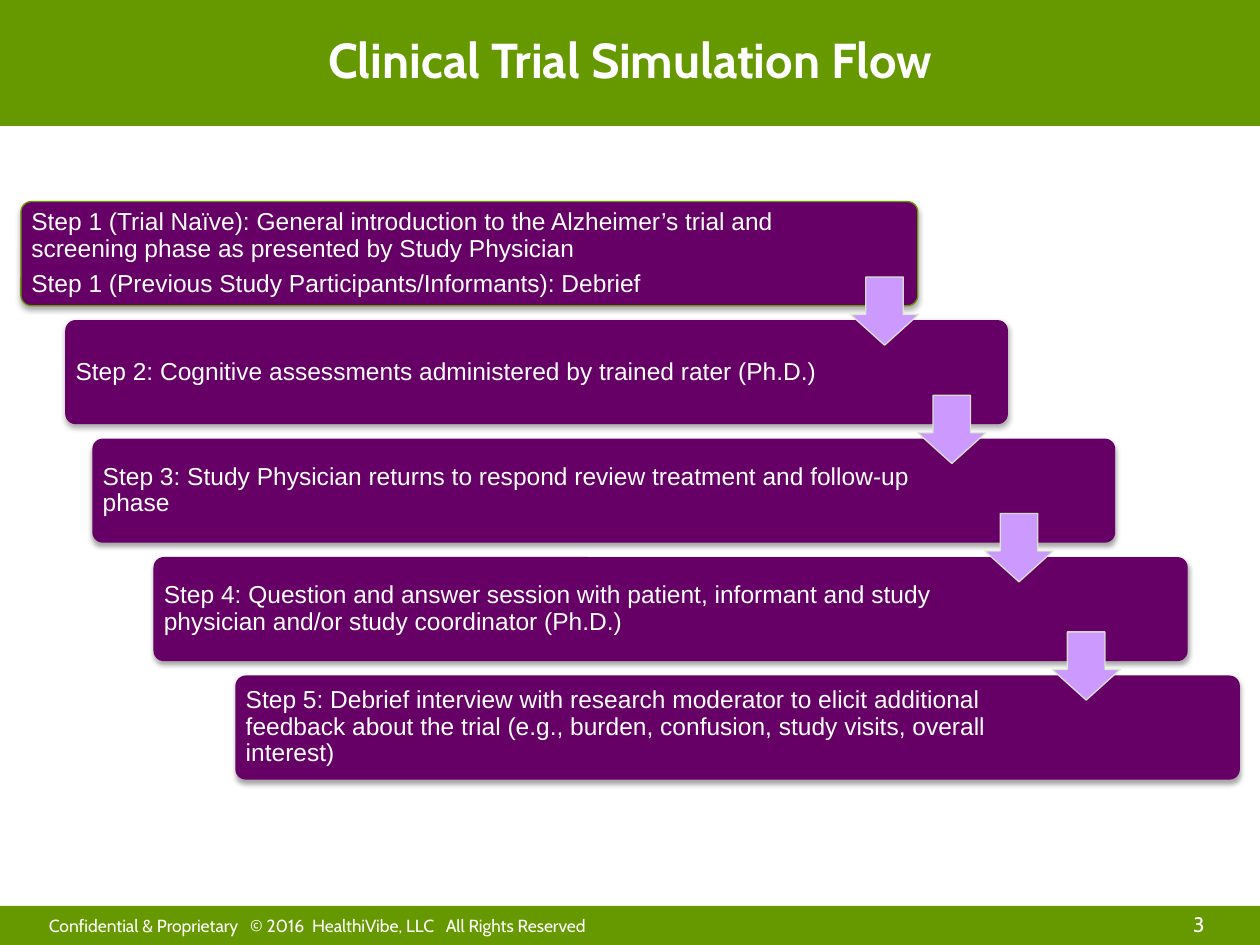
"""Build the Clinical Trial Simulation Flow slide."""
from lxml import etree
from pptx import Presentation
from pptx.dml.color import RGBColor
from pptx.enum.shapes import MSO_SHAPE
from pptx.enum.text import MSO_ANCHOR, PP_ALIGN
from pptx.oxml import parse_xml
from pptx.oxml.ns import nsdecls, qn
from pptx.util import Pt

RECTANGLE = MSO_SHAPE.RECTANGLE
ROUNDED = MSO_SHAPE.ROUNDED_RECTANGLE
DOWN_ARROW = MSO_SHAPE.DOWN_ARROW
TOP, MIDDLE, BOTTOM = MSO_ANCHOR.TOP, MSO_ANCHOR.MIDDLE, MSO_ANCHOR.BOTTOM
LEFT, CENTER, RIGHT = PP_ALIGN.LEFT, PP_ALIGN.CENTER, PP_ALIGN.RIGHT

GREEN = RGBColor(0x66, 0x99, 0x00)
PURPLE = RGBColor(0x66, 0x00, 0x66)
LILAC = RGBColor(0xCC, 0x99, 0xFF)
PALE_GREEN = RGBColor(0xDE, 0xEC, 0xCE)
WHITE = RGBColor(0xFF, 0xFF, 0xFF)

SHADOW_XML = (
    f'<a:effectLst {nsdecls("a")}><a:outerShdw blurRad="{Pt(3.1)}" dist="{Pt(1.8)}" '
    'dir="5400000" rotWithShape="0"><a:srgbClr val="000000"><a:alpha val="35000"/>'
    '</a:srgbClr></a:outerShdw></a:effectLst>'
)

CARD_TOP, CARD_HEIGHT, CARD_PITCH = 115.2, 59.5, 67.7
ARROW_LEFT, ARROW_TOP, ARROW_SIZE = 486, 158.3, 39
ARROW_STEP_X, ARROW_STEP_Y = 38.4, 67.6

# left, width, right inset, paragraphs
STEPS = [
    (12, 512.5, 72, [
        "Step 1 (Trial Naïve): General introduction to the Alzheimer’s trial and "
        "screening phase as presented by Study Physician",
        "Step 1 (Previous Study Participants/Informants): Debrief"]),
    (37.3, 538.7, 85, [
        "Step 2: Cognitive assessments administered by trained rater (Ph.D.)"]),
    (52.8, 584.5, 92, [
        "Step 3: Study Physician returns to respond review treatment and follow-up phase"]),
    (87.7, 591, 93, [
        "Step 4: Question and answer session with patient, informant and study "
        "physician and/or study coordinator (Ph.D.)"]),
    (134.5, 574, 90, [
        "Step 5: Debrief interview with research moderator to elicit additional "
        "feedback about the trial (e.g., burden, confusion, study visits, overall interest)"]),
]


def add_block(page, kind, left, top, width, height, color):
    block = page.shapes.add_shape(kind, Pt(left), Pt(top), Pt(width), Pt(height))
    block.shadow.inherit = False
    block.fill.solid()
    block.fill.fore_color.rgb = color
    block.line.fill.background()
    return block


def write(box, lines, font, size, align=LEFT, anchor=TOP, spacing=0.9, bold=False):
    frame = box.text_frame
    frame.word_wrap = True
    frame.vertical_anchor = anchor
    frame.text = "\n".join(lines)
    for para in frame.paragraphs:
        para.alignment = align
        para.line_spacing = spacing
        para.font.name = font
        para.font.size = Pt(size)
        para.font.bold = bold
        para.font.color.rgb = WHITE
    return frame


deck = Presentation()
deck.slide_width, deck.slide_height = Pt(720), Pt(540)
page = deck.slides.add_slide(deck.slide_layouts[6])

add_block(page, RECTANGLE, 0, 517.7, 720, 22.3, GREEN)
number = page.shapes.add_textbox(Pt(653.8), Pt(526.3), Pt(34.5), Pt(9.4))
frame = write(number, ["3"], "Cabin", 12, RIGHT, BOTTOM)
frame.margin_left = frame.margin_right = frame.margin_top = frame.margin_bottom = 0
footer = page.shapes.add_textbox(Pt(20.9), Pt(519.1), Pt(383), Pt(18))
write(footer, ["Confidential & Proprietary   © 2016  HealthiVibe, LLC   All Rights Reserved"],
      "Cabin", 10, spacing=1.0)

title = add_block(page, RECTANGLE, 0, 0, 720, 72, GREEN)
write(title, ["Clinical Trial Simulation Flow"], "Cabin", 28, CENTER, MIDDLE, bold=True)

for index, (left, width, right_inset, lines) in enumerate(STEPS):
    top = CARD_TOP + index * CARD_PITCH
    card = add_block(page, ROUNDED, left, top, width, CARD_HEIGHT, PURPLE)
    card.adjustments[0] = 0.1
    properties = card._element.spPr
    properties.replace(properties.find(qn("a:effectLst")), parse_xml(SHADOW_XML))
    if index == 0:
        card.line.color.rgb = GREEN
        card.line.width = Pt(0.75)
    frame = write(card, lines, "Arial", 14, LEFT, MIDDLE)
    frame.margin_left = frame.margin_top = frame.margin_bottom = Pt(4.2)
    frame.margin_right = Pt(right_inset)
    for para in frame.paragraphs[:-1]:
        para.space_after = Pt(4.9)

for index in range(len(STEPS) - 1):
    arrow = add_block(page, DOWN_ARROW, ARROW_LEFT + index * ARROW_STEP_X,
                      ARROW_TOP + index * ARROW_STEP_Y, ARROW_SIZE, ARROW_SIZE, LILAC)
    arrow.adjustments[0], arrow.adjustments[1] = 0.55, 0.45
    arrow.line.color.rgb = PALE_GREEN
    arrow.line.width = Pt(0.75)
    line_color = arrow.line._ln.find(".//" + qn("a:srgbClr"))
    etree.SubElement(line_color, qn("a:alpha"), val="90000")

deck.save("out.pptx")
